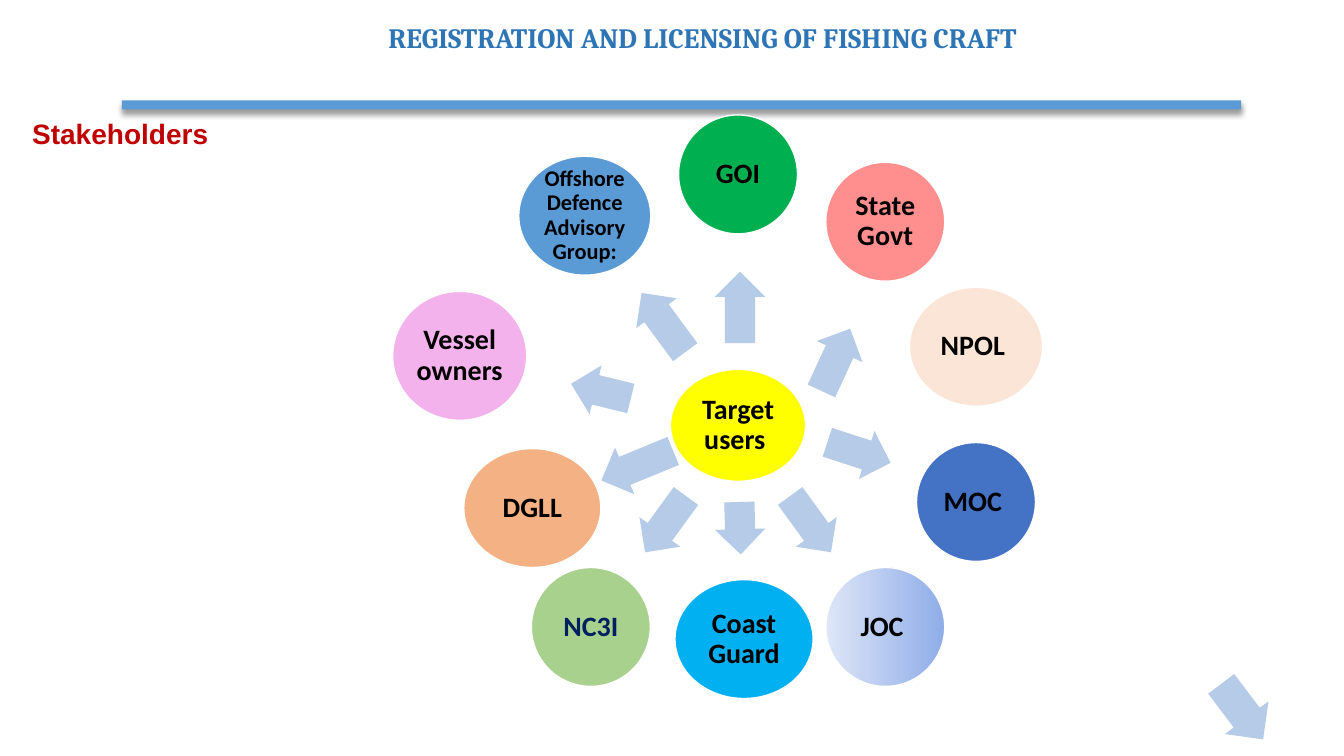
from lxml import etree
from pptx import Presentation
from pptx.dml.color import RGBColor
from pptx.enum.shapes import MSO_SHAPE as Shape
from pptx.enum.text import MSO_ANCHOR as Anchor, PP_ALIGN as Align
from pptx.oxml.ns import qn
from pptx.util import Inches, Pt

SLIDE_WIDTH, SLIDE_HEIGHT = 13.33, 7.5
BLACK, WHITE, ARROW_COLOUR = "000000", "FFFFFF", "B5CBE7"
DIAMETER, ARROW_HEIGHT, INSET = 1.18, 0.5, 0.03

# text, left, top, width, height, font, colour, alignment
HEADINGS = [
    ("Stakeholders", 0.22, 1.11, 3.08, 0.44, "Arial", "C00000", Align.JUSTIFY),
    ("REGISTRATION AND LICENSING OF FISHING CRAFT",
     2.96, 0.15, 8.02, 0.55, "Cambria", "2E75B6", Align.CENTER),
]
RULE = (6.76, 1.04, 11.1, 0.09)

# text, centre x, centre y, width, height, fill (two colours make a gradient)
HUB = ("Target users ", 7.32, 4.22, 1.34, 1.11, "FFFF00")
STAKEHOLDERS = [
    ("GOI", 7.32, 1.73, DIAMETER, DIAMETER, "00B050"),
    ("State Govt", 8.78, 2.2, DIAMETER, DIAMETER, "FF8F8F"),
    ("NPOL ", 9.68, 3.44, 1.32, DIAMETER, "FBE5D6"),
    ("MOC ", 9.68, 4.98, DIAMETER, DIAMETER, "4472C4"),
    ("JOC ", 8.78, 6.22, DIAMETER, DIAMETER, ("DEE6F7", "8FADE9")),
    ("Coast Guard", 7.38, 6.34, 1.37, DIAMETER, "00B0F0"),
    ("NC3I", 5.86, 6.22, DIAMETER, DIAMETER, "A9D18E"),
    ("DGLL", 5.28, 5.04, 1.36, DIAMETER, "F4B183"),
    ("Vessel owners", 4.56, 3.53, 1.33, 1.28, "F4B2EC"),
    ("Offshore Defence Advisory Group:", 5.8, 2.14, 1.31, DIAMETER, "5B9BD5"),
]
TEXT_COLOURS = {"NC3I": "002060"}
LONG_TEXT = 20  # more characters than this take the smaller size

# centre x, centre y, length, height, clockwise angle
ARROWS = [
    (7.34, 3.05, 0.71, ARROW_HEIGHT, 270),
    (8.29, 3.57, 0.68, ARROW_HEIGHT, 294.8),
    (8.52, 4.49, 0.66, ARROW_HEIGHT, 18),
    (8.04, 5.2, 0.69, ARROW_HEIGHT, 54),
    (7.34, 5.24, 0.52, ARROW_HEIGHT, 88.4),
    (6.6, 5.2, 0.69, ARROW_HEIGHT, 126),
    (6.32, 4.62, 0.77, ARROW_HEIGHT, 157.7),
    (5.96, 3.88, 0.61, ARROW_HEIGHT, 193.8),
    (6.58, 3.2, 0.73, ARROW_HEIGHT, 233.6),
    (12.32, 7.06, 0.69, 0.54, 53),
]


def colour(hex_value):
    return RGBColor.from_string(hex_value)


def add_centred(slide, kind, centre_x, centre_y, width, height, fill):
    """Add a preset shape around its centre, without outline or shadow."""
    shape = slide.shapes.add_shape(
        kind, Inches(centre_x - width / 2), Inches(centre_y - height / 2),
        Inches(width), Inches(height))
    shape.shadow.inherit = False
    shape.line.fill.background()
    if isinstance(fill, tuple):
        shape.fill.gradient()
        shape.fill.gradient_angle = 0
        for stop, stop_colour in zip(shape.fill.gradient_stops, fill):
            stop.color.rgb = colour(stop_colour)
    else:
        shape.fill.solid()
        shape.fill.fore_color.rgb = colour(fill)
    return shape


def write(shape, text, font_name, size, text_colour, alignment):
    shape.text_frame.word_wrap = True
    paragraph = shape.text_frame.paragraphs[0]
    paragraph.text = text
    paragraph.alignment = alignment
    font = paragraph.font
    font.name, font.size, font.bold = font_name, Pt(size), True
    font.color.rgb = colour(text_colour)
    return paragraph


def add_rule(slide):
    rule = add_centred(slide, Shape.RECTANGLE, *RULE, "5B9BD5")
    effects = rule._element.spPr.find(qn("a:effectLst"))
    shadow = etree.SubElement(effects, qn("a:outerShdw"), blurRad=str(Pt(4)),
                              dist=str(Pt(3)), dir="5400000", rotWithShape="0")
    tint = etree.SubElement(shadow, qn("a:srgbClr"), val=BLACK)
    etree.SubElement(tint, qn("a:alpha"), val="40000")


def add_bubble(slide, text, centre_x, centre_y, width, height, fill):
    bubble = add_centred(slide, Shape.OVAL, centre_x, centre_y, width, height, fill)
    bubble.line.color.rgb = colour(WHITE)
    bubble.line.width = Pt(1)
    frame = bubble.text_frame
    frame.vertical_anchor = Anchor.MIDDLE
    frame.margin_left = frame.margin_right = Inches(INSET)
    frame.margin_top = frame.margin_bottom = Inches(INSET)
    size = 16 if len(text) > LONG_TEXT else 20
    paragraph = write(bubble, text, "Calibri", size,
                      TEXT_COLOURS.get(text, BLACK), Align.CENTER)
    paragraph.line_spacing = 0.9


def main():
    presentation = Presentation()
    presentation.slide_width = Inches(SLIDE_WIDTH)
    presentation.slide_height = Inches(SLIDE_HEIGHT)
    slide = presentation.slides.add_slide(presentation.slide_layouts[6])
    add_rule(slide)
    for *arrow_box, angle in ARROWS:
        arrow = add_centred(slide, Shape.RIGHT_ARROW, *arrow_box, ARROW_COLOUR)
        arrow.adjustments[0] = 0.6
        arrow.rotation = angle
    for bubble in [HUB, *STAKEHOLDERS]:
        add_bubble(slide, *bubble)
    for text, left, top, width, height, font_name, text_colour, alignment in HEADINGS:
        box = slide.shapes.add_textbox(*map(Inches, (left, top, width, height)))
        write(box, text, font_name, 20, text_colour, alignment)
    presentation.save("out.pptx")


if __name__ == "__main__":
    main()
